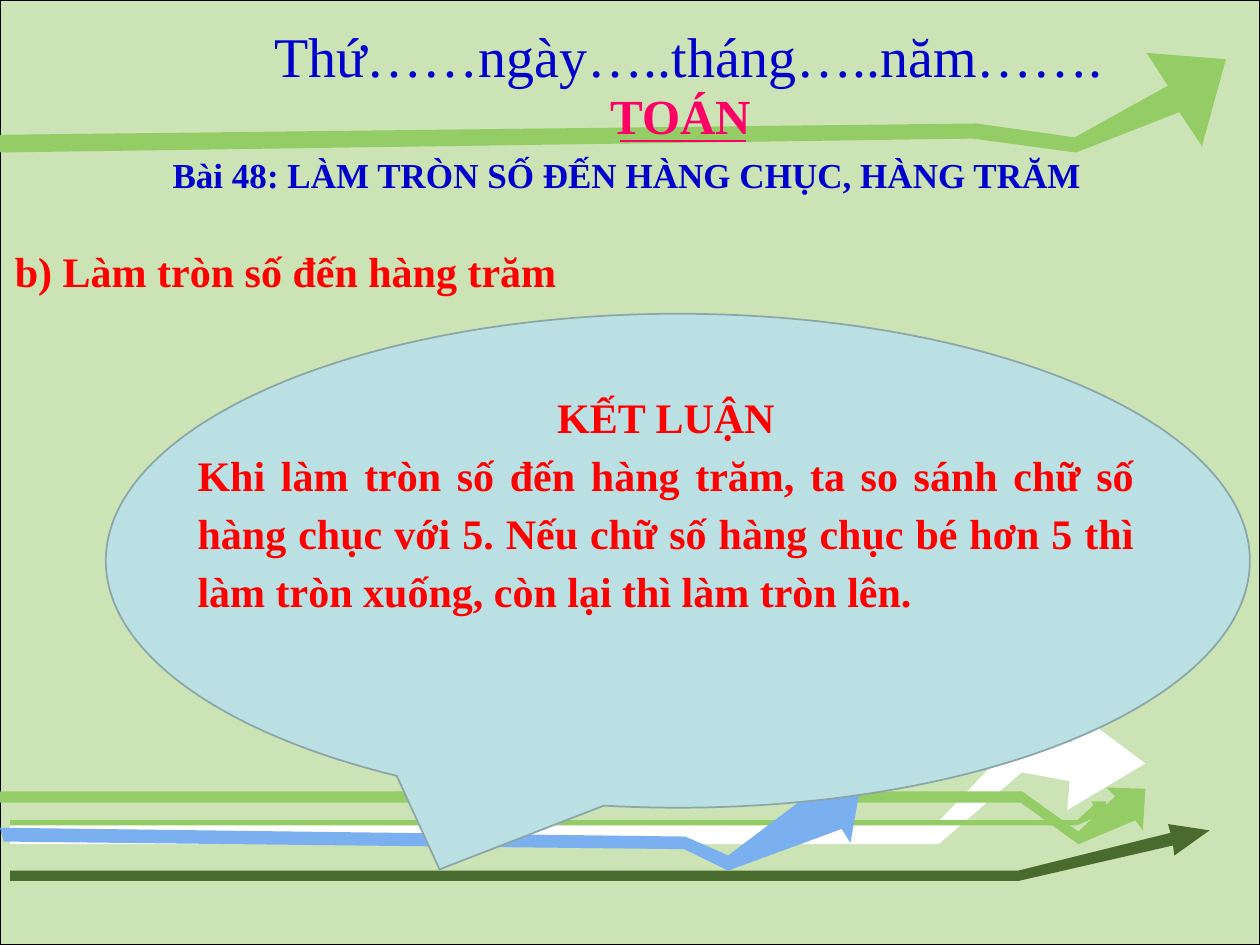
from pptx import Presentation
from pptx.dml.color import RGBColor
from pptx.enum.shapes import MSO_CONNECTOR as Link, MSO_SHAPE as Form
from pptx.enum.text import MSO_ANCHOR as Anchor, MSO_AUTO_SIZE as Fit, PP_ALIGN as Align
from pptx.oxml.ns import qn
from pptx.util import Inches, Pt
from lxml import etree

PALE = RGBColor(0xCB, 0xE3, 0xB5)
GREEN = RGBColor(0x94, 0xCC, 0x66)
DARK = RGBColor(0x49, 0x6B, 0x2E)
SKY = RGBColor(0x7A, 0xAF, 0xF0)
WHITE = RGBColor(0xFF, 0xFF, 0xFF)
BLACK = RGBColor(0, 0, 0)
AQUA = RGBColor(0xBB, 0xE0, 0xE3)
GREY = RGBColor(0x8A, 0xA6, 0xA8)
RED = RGBColor(0xFF, 0, 0)
PINK = RGBColor(0xFF, 0, 0x66)
BLUE = RGBColor(0, 0, 0xCC)
FACE = "Times New Roman"
UNIT = Inches(0.01)

ARROWS = [
    (WHITE, [(8, 653), (744, 653), (804, 590), (851, 589), (853, 564), (909, 606),
             (847, 643), (849, 620), (811, 613), (745, 670), (8, 670)]),
    (GREEN, [(8, 651), (855, 651), (868, 639), (866, 636), (878, 636), (877, 650),
             (874, 646), (875, 646), (855, 655), (8, 655)]),
    (GREEN, [(0, 628), (811, 628), (856, 660), (885, 632), (878, 625), (909, 626),
             (907, 659), (901, 651), (856, 670), (810, 637), (0, 637)]),
    (DARK, [(8, 691), (808, 691), (929, 661), (927, 654), (960, 659), (932, 679),
            (931, 671), (809, 699), (8, 699)]),
    (SKY, [(3, 668), (543, 674), (578, 691), (668, 658), (675, 669), (684, 618),
           (637, 608), (648, 626), (578, 679), (544, 664), (0, 657)]),
    (GREEN, [(0, 121), (772, 110), (854, 121), (936, 89), (954, 116), (973, 47),
             (910, 42), (927, 68), (853, 109), (775, 98), (0, 107)]),
]


def apply(item, style):
    for name, value in style.items():
        setattr(item, name, value)


def paint(shape, fill, edge=None, width=1):
    shape.shadow.inherit = False
    shape.fill.solid()
    shape.fill.fore_color.rgb = fill
    if edge is None:
        shape.line.fill.background()
    else:
        shape.line.color.rgb = edge
        shape.line.width = Pt(width)


def add_form(slide, kind, box, fill, edge, width):
    shape = slide.shapes.add_shape(kind, *map(Inches, box))
    paint(shape, fill, edge, width)


def add_arrow(slide, fill, points):
    pen = slide.shapes.build_freeform(*points[0], scale=UNIT)
    pen.add_line_segments(points[1:], close=True)
    paint(pen.convert_to_shape(), fill)


def write(frame, lines, size, color, bold=True, wrap=True, space=None):
    apply(frame, {"word_wrap": wrap, "auto_size": Fit.SHAPE_TO_FIT_TEXT,
                  "vertical_anchor": Anchor.TOP})
    for i, (text, align) in enumerate(lines):
        para = frame.add_paragraph() if i else frame.paragraphs[0]
        apply(para, {"alignment": align, "line_spacing": space})
        run = para.add_run()
        run.text = text
        apply(run.font, {"name": FACE, "size": Pt(size), "bold": bold})
        run.font.color.rgb = color


def add_text(slide, box, lines, size, color, **style):
    shape = slide.shapes.add_textbox(*map(Inches, box))
    write(shape.text_frame, lines, size, color, **style)


def add_rule(slide, start, end, color):
    rule = slide.shapes.add_connector(Link.STRAIGHT, *map(Inches, start + end))
    rule.line.color.rgb = color
    rule.line.width = Pt(1)
    etree.SubElement(rule._element.spPr, qn("a:effectLst"))


def set_title(slide, box, text, size, color):
    title = slide.shapes.title
    apply(title, dict(zip(("left", "top", "width", "height"), map(Inches, box))))
    frame = title.text_frame
    apply(frame, {"margin_left": Inches(0.16), "margin_right": Inches(0.16),
                  "margin_top": Inches(0.08), "margin_bottom": Inches(0.08)})
    write(frame, [(text, Align.CENTER)], size, color, space=1.0)
    slide.shapes._spTree.append(title._element)


def main():
    deck = Presentation()
    apply(deck, {"slide_width": Inches(10), "slide_height": Inches(7.5)})
    slide = deck.slides.add_slide(deck.slide_layouts[5])
    add_form(slide, Form.RECTANGLE, (0, 0, 10, 7.5), PALE, BLACK, 0.75)
    for fill, points in ARROWS:
        add_arrow(slide, fill, points)
    add_form(slide, Form.OVAL_CALLOUT, (0.84, 2.49, 9.08, 3.92), AQUA, GREY, 1)
    add_text(slide, (1.47, 3, 7.63, 1.96), [
        ("KẾT LUẬN", Align.CENTER),
        ("Khi làm tròn số đến hàng trăm, ta so sánh chữ số hàng chục với 5. "
         "Nếu chữ số hàng chục bé hơn 5 thì làm tròn xuống, còn lại thì làm tròn lên.",
         Align.JUSTIFY)], 24, RED, space=1.15)
    add_text(slide, (0.02, 1.9, 4.61, 0.51),
             [("b) Làm tròn số đến hàng trăm", Align.LEFT)], 24, RED, wrap=False)
    add_text(slide, (2.08, 0.12, 6.84, 0.64),
             [("Thứ……ngày…..tháng…..năm…….", Align.LEFT)], 32, BLUE, bold=False, wrap=False)
    add_text(slide, (4.75, 0.63, 1.33, 0.57),
             [("TOÁN", Align.LEFT)], 28, PINK, wrap=False)
    add_rule(slide, (4.92, 1.12), (5.92, 1.12), PINK)
    set_title(slide, (0.25, 1.14, 9.52, 0.49),
              "Bài 48: LÀM TRÒN SỐ ĐẾN HÀNG CHỤC, HÀNG TRĂM ", 20, BLUE)
    deck.save("out.pptx")


if __name__ == "__main__":
    main()
